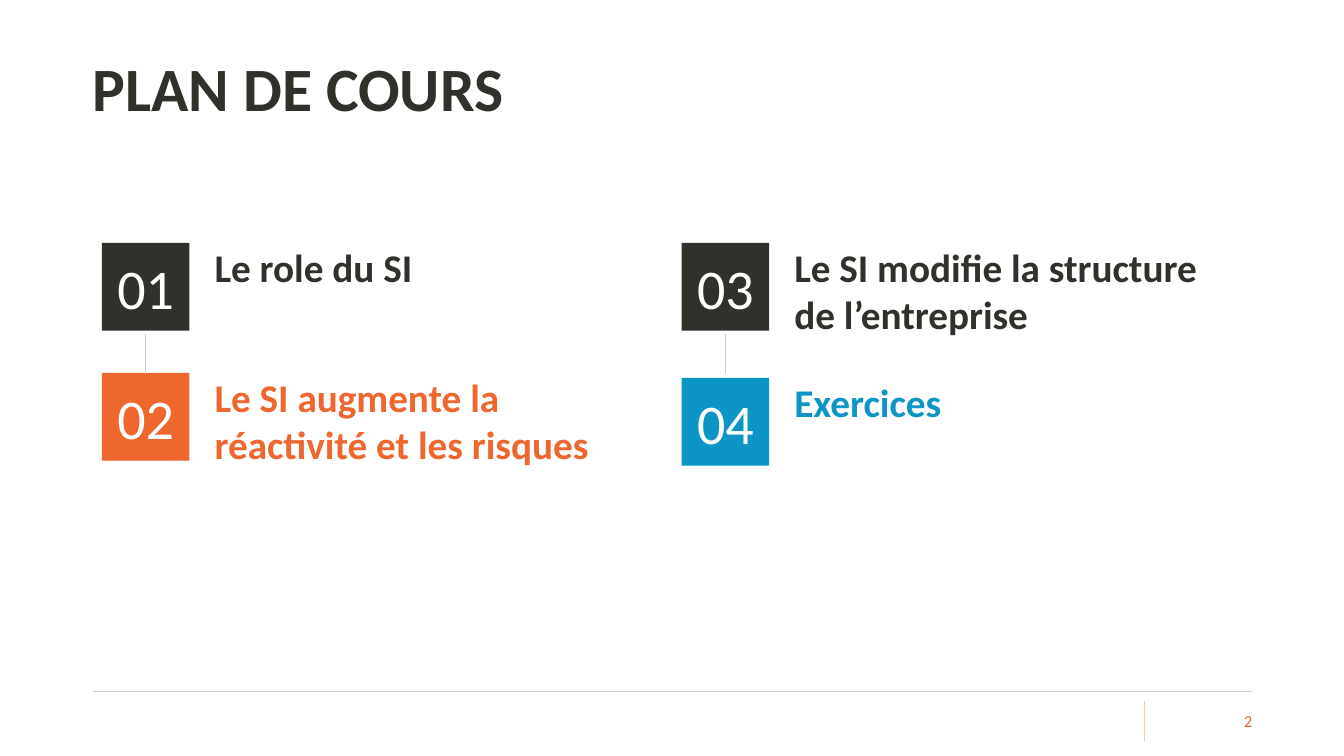
from dataclasses import dataclass
from lxml.etree import SubElement
from pptx import Presentation
from pptx.dml.color import RGBColor
from pptx.enum.shapes import MSO_CONNECTOR as Connector, MSO_SHAPE as Shape
from pptx.enum.text import MSO_ANCHOR as Anchor, MSO_AUTO_SIZE as AutoSize, PP_ALIGN as Align
from pptx.oxml.ns import qn
from pptx.util import Inches, Pt

TITLE = "PLAN DE COURS"
PAGE_NUMBER = "2"
COLUMNS = [
    [("01", "Le role du SI", "dark", 0), ("02", "Le SI augmente la réactivité et les risques", "orange", 1.29)],
    [("03", "Le SI modifie la structure de l’entreprise", "dark", 0), ("04", "Exercices", "blue", 1.34)],
]


@dataclass(frozen=True)
class Theme:
    font: str = "Calibri"
    dark: str = "31302B"
    orange: str = "EE672F"
    blue: str = "0D96C5"
    white: str = "FFFFFF"
    link: str = "D0CECE"
    rule: str = "CECDC7"
    divider: str = "F8C2AC"
    title_size: int = 44
    number_size: int = 40
    label_size: int = 28
    page_size: int = 12
    line_width: float = 0.5


THEME = Theme()
WIDTH, HEIGHT = 13.33, 7.5
LEFT, RIGHT = 0.92, 12.42
GRID_LEFT, GRID_TOP, COLUMN_STEP = 1.01, 2.41, 5.75
TILE, LABEL_OFFSET, LABEL_WIDTH, LINE_HEIGHT = 0.87, 1.02, 4.61, 0.47
LINK_GAP, LINK_LENGTH = 0.03, 0.4
FOOTER_TOP, FOOTER_HEIGHT = 6.95, 0.4
DIVIDER_X, PAGE_LEFT = 11.35, 11.47


def write(shape, text, size, color, bold=False, align=Align.LEFT, anchor=Anchor.TOP, insets=(0.1, 0.05, 0.1, 0.05)):
    frame = shape.text_frame
    frame.text = text
    frame.word_wrap = True
    frame.vertical_anchor = anchor
    frame.margin_left, frame.margin_top, frame.margin_right, frame.margin_bottom = map(Inches, insets)
    para = frame.paragraphs[0]
    para.alignment = align
    font = para.runs[0].font
    font.name, font.size, font.bold = THEME.font, Pt(size), bold
    font.color.rgb = RGBColor.from_string(color)
    return frame


def add_box(page, *place):
    return page.shapes.add_textbox(*map(Inches, place))


def add_line(page, color, *ends):
    line = page.shapes.add_connector(Connector.STRAIGHT, *map(Inches, ends))
    line.line.color.rgb = RGBColor.from_string(color)
    line.line.width = Pt(THEME.line_width)
    SubElement(line._element.spPr, qn("a:effectLst"))


def add_topic(page, left, top, number, label, color):
    box = add_box(page, left + LABEL_OFFSET, top, LABEL_WIDTH, LINE_HEIGHT)
    frame = write(box, label, THEME.label_size, color, bold=True, insets=(0.1, 0, 0.1, 0))
    frame.auto_size = AutoSize.SHAPE_TO_FIT_TEXT
    tile = page.shapes.add_shape(Shape.RECTANGLE, *map(Inches, (left, top, TILE, TILE)))
    tile.shadow.inherit = False
    tile.fill.solid()
    tile.fill.fore_color.rgb = RGBColor.from_string(color)
    tile.line.fill.background()
    write(tile, number, THEME.number_size, THEME.white, align=Align.CENTER, anchor=Anchor.MIDDLE)


def add_title(page):
    title = page.shapes.title
    title.left, title.top, title.width, title.height = map(Inches, (LEFT, 0.18, 10.47, 1.45))
    frame = write(title, TITLE, THEME.title_size, THEME.dark, bold=True, anchor=Anchor.MIDDLE, insets=(0, 0.05, 0.1, 0.05))
    frame.paragraphs[0].line_spacing = 0.9


def add_footer(page):
    rule_y = 6.86
    add_line(page, THEME.rule, LEFT, rule_y, RIGHT, rule_y)
    add_line(page, THEME.divider, DIVIDER_X, FOOTER_TOP, DIVIDER_X, FOOTER_TOP + FOOTER_HEIGHT)
    box = add_box(page, PAGE_LEFT, FOOTER_TOP, RIGHT - PAGE_LEFT, FOOTER_HEIGHT)
    write(box, PAGE_NUMBER, THEME.page_size, THEME.orange, align=Align.RIGHT, anchor=Anchor.MIDDLE, insets=(0, 0.05, 0, 0.05))


def main():
    deck = Presentation()
    deck.slide_width, deck.slide_height = Inches(WIDTH), Inches(HEIGHT)
    page = deck.slides.add_slide(deck.slide_layouts.get_by_name("Title Only"))
    add_title(page)
    for column, topics in enumerate(COLUMNS):
        left = GRID_LEFT + column * COLUMN_STEP
        for number, label, color, drop in topics:
            add_topic(page, left, GRID_TOP + drop, number, label, getattr(THEME, color))
        link_x, link_top = left + TILE / 2, GRID_TOP + TILE + LINK_GAP
        add_line(page, THEME.link, link_x, link_top, link_x, link_top + LINK_LENGTH)
    add_footer(page)
    deck.save("out.pptx")


if __name__ == "__main__":
    main()
